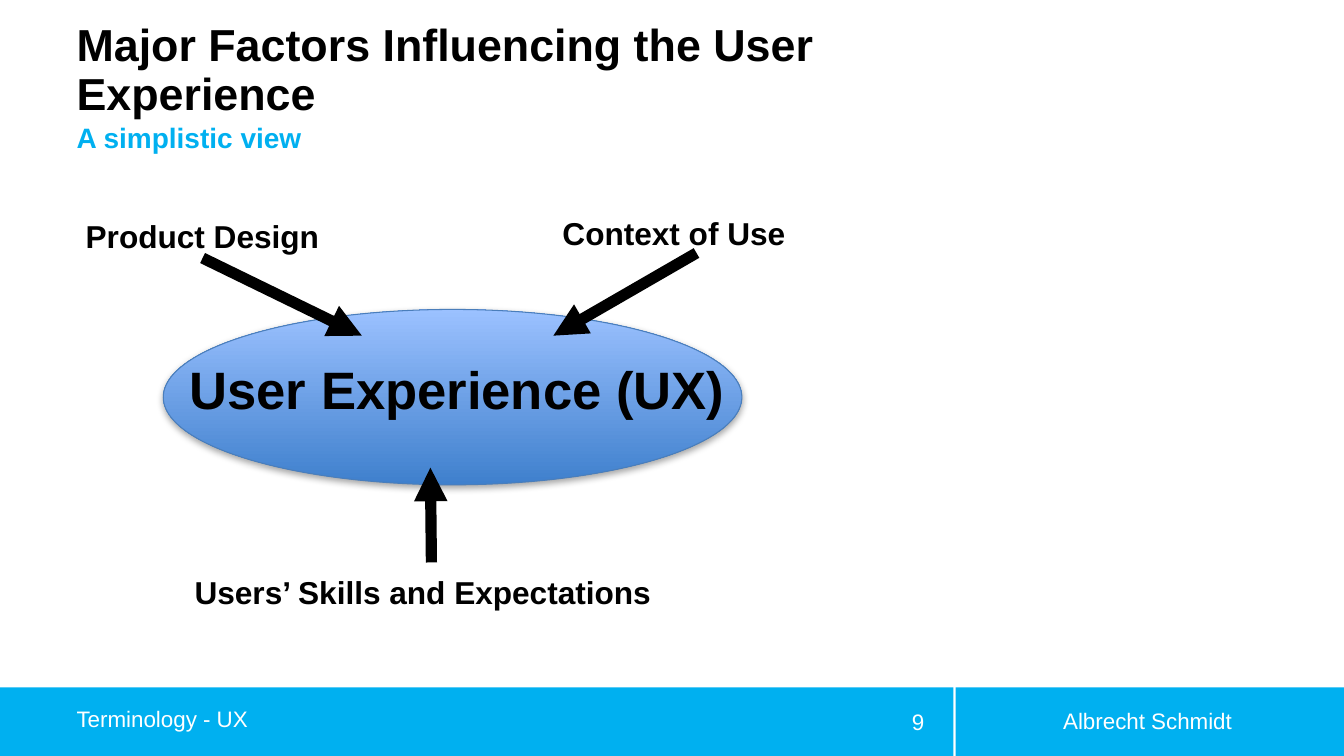
"""Build the slide on the major factors influencing the user experience."""
from dataclasses import dataclass

import lxml.etree
import pptx
import pptx.dml.color
import pptx.enum.shapes
import pptx.enum.text
import pptx.oxml
import pptx.oxml.ns
import pptx.util

Pt = pptx.util.Pt
RGB = pptx.dml.color.RGBColor
ALIGN = pptx.enum.text.PP_ALIGN
ANCHOR = pptx.enum.text.MSO_ANCHOR
AUTO = pptx.enum.text.MSO_AUTO_SIZE
SHAPE = pptx.enum.shapes.MSO_SHAPE
qn = pptx.oxml.ns.qn

Box = tuple[float, float, float, float]
Point = tuple[float, float]


@dataclass(frozen=True)
class Theme:
    font: str = "Arial"
    ink: RGB = RGB(0, 0, 0)
    paper: RGB = RGB(255, 255, 255)
    accent: RGB = RGB(0x00, 0xB0, 0xF0)
    oval_dark: RGB = RGB(0x3F, 0x80, 0xCD)
    oval_light: RGB = RGB(0x9B, 0xC1, 0xFF)
    oval_line: RGB = RGB(0x4A, 0x7E, 0xBB)
    title: float = 32
    subtitle: float = 20
    footer: float = 16
    factor: float = 22.6
    centre: float = 37.6


THEME = Theme()


@dataclass(frozen=True)
class Label:
    text: str
    box: Box
    size: float
    color: RGB = THEME.ink
    bold: bool = True
    align: ALIGN = ALIGN.LEFT
    anchor: ANCHOR = ANCHOR.TOP
    inset: Point = (6.5, 3.6)
    line_spacing: float = 1.0
    auto: AUTO = AUTO.NONE
    wrap: bool = True


@dataclass(frozen=True)
class Arrow:
    start: Point
    tip: Point


TITLE = Label("Major Factors Influencing the User Experience", (54.72, 9.36, 626.4, 76.32),
              THEME.title, anchor=ANCHOR.BOTTOM, inset=(0, 0), line_spacing=0.9)
HEADING = [
    Label("A simplistic view", (54.72, 85.68, 626.4, 39.6), THEME.subtitle, THEME.accent,
          inset=(0, 2.88), line_spacing=0.9),
]
FOOTER = [
    Label("Terminology - UX", (54.72, 500.4, 442.08, 28.8), THEME.footer, THEME.paper, False,
          anchor=ANCHOR.MIDDLE, inset=(0, 0), line_spacing=0.9),
    Label("Albrecht Schmidt", (691.92, 500.4, 255.6, 28.8), THEME.footer, THEME.paper, False,
          ALIGN.CENTER, ANCHOR.MIDDLE, (7.2, 3.6)),
    Label("9", (605.52, 501.12, 61.92, 28.8), THEME.footer, THEME.paper, False,
          ALIGN.RIGHT, ANCHOR.MIDDLE, (7.2, 3.6)),
]
DIAGRAM = [
    Label("Product Design", (54.72, 151.2, 185.76, 33.84), THEME.factor,
          auto=AUTO.SHAPE_TO_FIT_TEXT),
    Label("Context of Use", (395.28, 149.04, 173.52, 33.84), THEME.factor,
          auto=AUTO.SHAPE_TO_FIT_TEXT, wrap=False),
    Label("User Experience (UX)", (128.88, 251.28, 435.6, 52.56), THEME.centre,
          auto=AUTO.SHAPE_TO_FIT_TEXT),
    Label("Users’ Skills and Expectations", (132.48, 405.36, 360.72, 33.84), THEME.factor,
          auto=AUTO.SHAPE_TO_FIT_TEXT),
]
ARROWS = [
    Arrow((497.52, 180.72), (395.28, 239.76)),
    Arrow((144.72, 184.32), (258.48, 239.76)),
    Arrow((308.16, 401.76), (307.44, 334.08)),
]
BARS: list[Box] = [(682.56, 491.04, 277.44, 48.96), (0, 491.04, 681.12, 48.96)]
OVAL: Box = (116.64, 221.04, 413.28, 125.28)


def points(values: tuple[float, ...]) -> list[pptx.util.Length]:
    """Convert plain numbers to point lengths."""
    return [Pt(v) for v in values]


def write_label(sp, label: Label) -> None:
    """Place a shape and write its formatted text."""
    sp.left, sp.top, sp.width, sp.height = points(label.box)
    tf = sp.text_frame
    tf.word_wrap = label.wrap
    tf.auto_size = label.auto
    tf.vertical_anchor = label.anchor
    tf.margin_left = tf.margin_right = Pt(label.inset[0])
    tf.margin_top = tf.margin_bottom = Pt(label.inset[1])
    p = tf.paragraphs[0]
    p.text = label.text
    p.alignment = label.align
    p.line_spacing = label.line_spacing
    p.font.name = THEME.font
    p.font.size = Pt(label.size)
    p.font.bold = label.bold
    p.font.color.rgb = label.color


def add_labels(shapes, labels: list[Label]) -> None:
    """Add a text box for each label."""
    for label in labels:
        write_label(shapes.add_textbox(*points(label.box)), label)


def add_bar(shapes, box: Box) -> None:
    """Add a flat footer bar."""
    sp = shapes.add_shape(SHAPE.RECTANGLE, *points(box))
    sp.shadow.inherit = False
    sp.fill.solid()
    sp.fill.fore_color.rgb = THEME.accent
    sp.line.fill.background()


def add_oval(shapes, box: Box) -> None:
    """Add the shaded oval with its soft shadow."""
    sp = shapes.add_shape(SHAPE.OVAL, *points(box))
    sp.fill.gradient()
    sp.fill.gradient_angle = 90
    for stop, color in zip(sp.fill.gradient_stops, (THEME.oval_dark, THEME.oval_light)):
        stop.color.rgb = color
    sp.fill.gradient_stops[0].position = 0
    sp.fill.gradient_stops[1].position = 1
    sp.line.color.rgb = THEME.oval_line
    sp.line.width = Pt(0.75)
    sp.shadow.inherit = False
    effects = sp._element.spPr.find(qn("a:effectLst"))
    shadow = lxml.etree.SubElement(effects, qn("a:outerShdw"), blurRad=str(Pt(5)),
                                   dist=str(Pt(1.8)), dir="5400000", rotWithShape="0")
    color = lxml.etree.SubElement(shadow, qn("a:srgbClr"), val=str(THEME.ink))
    lxml.etree.SubElement(color, qn("a:alpha"), val="35000")


def add_arrow(shapes, arrow: Arrow) -> None:
    """Add a thick arrow from its start to its tip."""
    line = shapes.add_connector(pptx.enum.shapes.MSO_CONNECTOR.STRAIGHT,
                                *points(arrow.start + arrow.tip))
    line.line.color.rgb = THEME.ink
    line.line.width = Pt(8)
    lxml.etree.SubElement(line.line._get_or_add_ln(), qn("a:tailEnd"), type="triangle")
    lxml.etree.SubElement(line._element.spPr, qn("a:effectLst"))


def main() -> None:
    """Build and save the slide."""
    prs = pptx.Presentation()
    prs.slide_width, prs.slide_height = Pt(960), Pt(540)
    s = prs.slides.add_slide(prs.slide_layouts.get_by_name("Title Only"))
    for bar in BARS:
        add_bar(s.shapes, bar)
    write_label(s.shapes.title, TITLE)
    add_labels(s.shapes, HEADING + FOOTER)
    add_oval(s.shapes, OVAL)
    for arrow in ARROWS:
        add_arrow(s.shapes, arrow)
    add_labels(s.shapes, DIAGRAM)
    prs.save("out.pptx")


if __name__ == "__main__":
    main()
